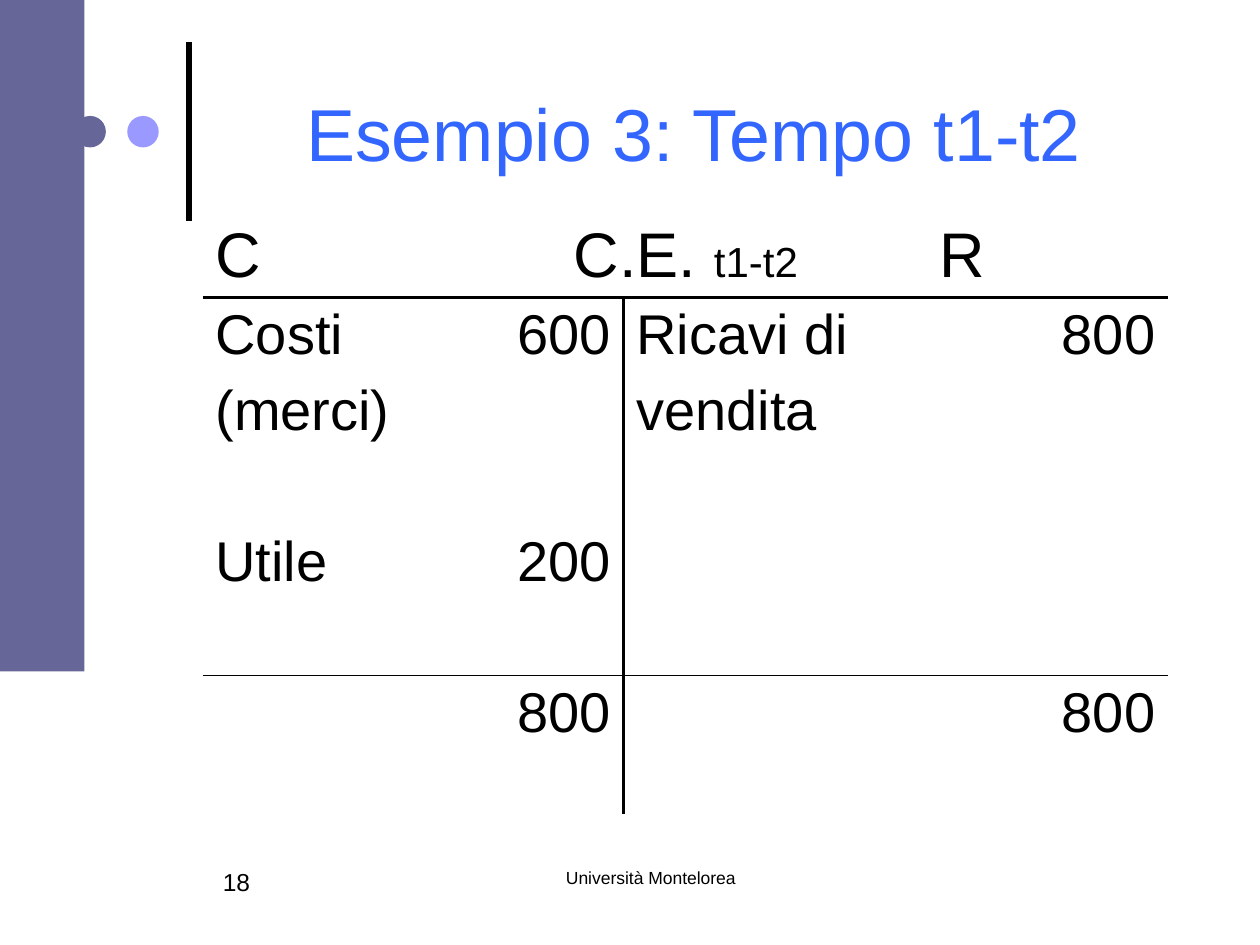
from pptx import Presentation
from pptx.dml.color import RGBColor
from pptx.enum.shapes import MSO_CONNECTOR, MSO_SHAPE
from pptx.enum.text import MSO_ANCHOR, PP_ALIGN
from pptx.oxml.ns import qn
from pptx.util import Inches, Pt
from lxml import etree

LEFT, CENTER, RIGHT = PP_ALIGN.LEFT, PP_ALIGN.CENTER, PP_ALIGN.RIGHT
TOP, MIDDLE, BOTTOM = MSO_ANCHOR.TOP, MSO_ANCHOR.MIDDLE, MSO_ANCHOR.BOTTOM
OVAL, RECTANGLE = MSO_SHAPE.OVAL, MSO_SHAPE.RECTANGLE
STRAIGHT = MSO_CONNECTOR.STRAIGHT
NO_STYLE = "{2D5ABB26-0587-4C30-8999-92F81FD0307C}"

THEME = {
    "font": "Arial", "ink": "000000", "title": "3366FF",
    "band": "666699", "dot": "9999FF",
    "title_size": 42, "head_size": 36, "body_size": 32, "period_size": 24,
    "number_size": 14, "footer_size": 10,
}


def format_text(frame, size, align=LEFT, color="ink"):
    for para in frame.paragraphs:
        para.alignment = align
        for span in para.runs:
            span.font.name = THEME["font"]
            span.font.size = Pt(THEME[size])
            span.font.color.rgb = RGBColor.from_string(THEME[color])


def set_borders(cell, widths):
    """Set the left, right, top and bottom borders; width 0 means no line."""
    properties = cell._tc.get_or_add_tcPr()
    for position, (side, width) in enumerate(zip("LRTB", widths)):
        edge = etree.Element(qn(f"a:ln{side}"), w=str(Pt(width)))
        if width:
            fill = etree.SubElement(edge, qn("a:solidFill"))
            etree.SubElement(fill, qn("a:srgbClr"), val=THEME["ink"])
        else:
            etree.SubElement(edge, qn("a:noFill"))
        properties.insert(position, edge)


deck = Presentation()
deck.slide_width, deck.slide_height = Inches(10), Inches(7.5)
page = deck.slides.add_slide(deck.slide_layouts[5])

# Title
title = page.shapes.title
title.left, title.top = Inches(1.67), Inches(0.21)
title.width, title.height = Inches(7.67), Inches(1.67)
title.text_frame.text = "Esempio 3: Tempo t1-t2"
title.text_frame.vertical_anchor = MIDDLE
format_text(title.text_frame, "title_size", CENTER, "title")

# Decoration: upright rule, two dots and the side band
rule = page.shapes.add_connector(STRAIGHT, Inches(1.5), Inches(1.75), Inches(1.5), Inches(0.33))
rule.line.color.rgb = RGBColor.from_string(THEME["ink"])
rule.line.width = Pt(3)
etree.SubElement(rule._element.spPr, qn("a:effectLst"))

for kind, color, *place in (
    (OVAL, "band", 0.59, 0.92, 0.25, 0.25),
    (OVAL, "dot", 1.01, 0.92, 0.25, 0.25),
    (RECTANGLE, "band", 0, 0, 0.67, 5.33),
):
    shape = page.shapes.add_shape(kind, *map(Inches, place))
    shape.shadow.inherit = False
    shape.fill.solid()
    shape.fill.fore_color.rgb = RGBColor.from_string(THEME[color])
    shape.line.fill.background()

# Footer and page number
for words, left, width, size, align in (
    ("Università Montelorea", 3.58, 3.17, "footer_size", CENTER),
    ("18", 1.67, 1.42, "number_size", LEFT),
):
    box = page.shapes.add_textbox(Inches(left), Inches(6.83), Inches(width), Inches(0.5))
    box.text_frame.word_wrap = True
    box.text_frame.vertical_anchor = TOP
    box.text_frame.text = words
    format_text(box.text_frame, size, align)

# Profit and loss account: costs on the left, revenues on the right
ACCOUNT = [
    ("C", "C.E. ", "", "R"),
    ("Costi", "600", "Ricavi di", "800"),
    ("(merci)", "", "vendita", ""),
    ("", "", "", ""),
    ("Utile", "200", "", ""),
    ("", "", "", ""),
    ("", "800", "", "800"),
    ("", "", "", ""),
]
COLUMNS = [1.92, 1.42, 2.41, 1.91]
ROWS = [0.66] + [0.6] * 6 + [0.5]
RULES_BELOW = {0: 2, 5: 1}  # row index: line width

frame = page.shapes.add_table(
    len(ROWS), len(COLUMNS), Inches(1.61), Inches(1.7), Inches(sum(COLUMNS)), Inches(sum(ROWS)))
table = frame.table
table.first_row = table.horz_banding = False
table._tbl.tblPr.find(qn("a:tableStyleId")).text = NO_STYLE
for column, width in zip(table.columns, COLUMNS):
    column.width = Inches(width)
for row, height in zip(table.rows, ROWS):
    row.height = Inches(height)
table.cell(0, 1).merge(table.cell(0, 2))

for r, entries in enumerate(ACCOUNT):
    for c, words in enumerate(entries):
        cell = table.cell(r, c)
        cell.fill.background()
        cell.vertical_anchor = BOTTOM
        cell.margin_top, cell.margin_bottom = 0, Inches(0.05)
        if words:
            cell.text_frame.text = words
            amount = r > 0 and c in (1, 3)
            align = RIGHT if amount else CENTER if (r, c) == (0, 1) else LEFT
            format_text(cell.text_frame, "body_size" if r else "head_size", align)

        # The T: one stem between the two sides, rules under heading and entries
        left = 2 if r > 0 and c == 2 else 0
        right = 2 if r > 0 and c == 1 else 0
        set_borders(cell, (left, right, RULES_BELOW.get(r - 1, 0), RULES_BELOW.get(r, 0)))

# Smaller period mark beside the account name
heading = table.cell(0, 1).text_frame.paragraphs[0]
period = heading.add_run()
period.text = "t1-t2"
period.font.name = THEME["font"]
period.font.size = Pt(THEME["period_size"])
period.font.color.rgb = RGBColor.from_string(THEME["ink"])

deck.save("out.pptx")
